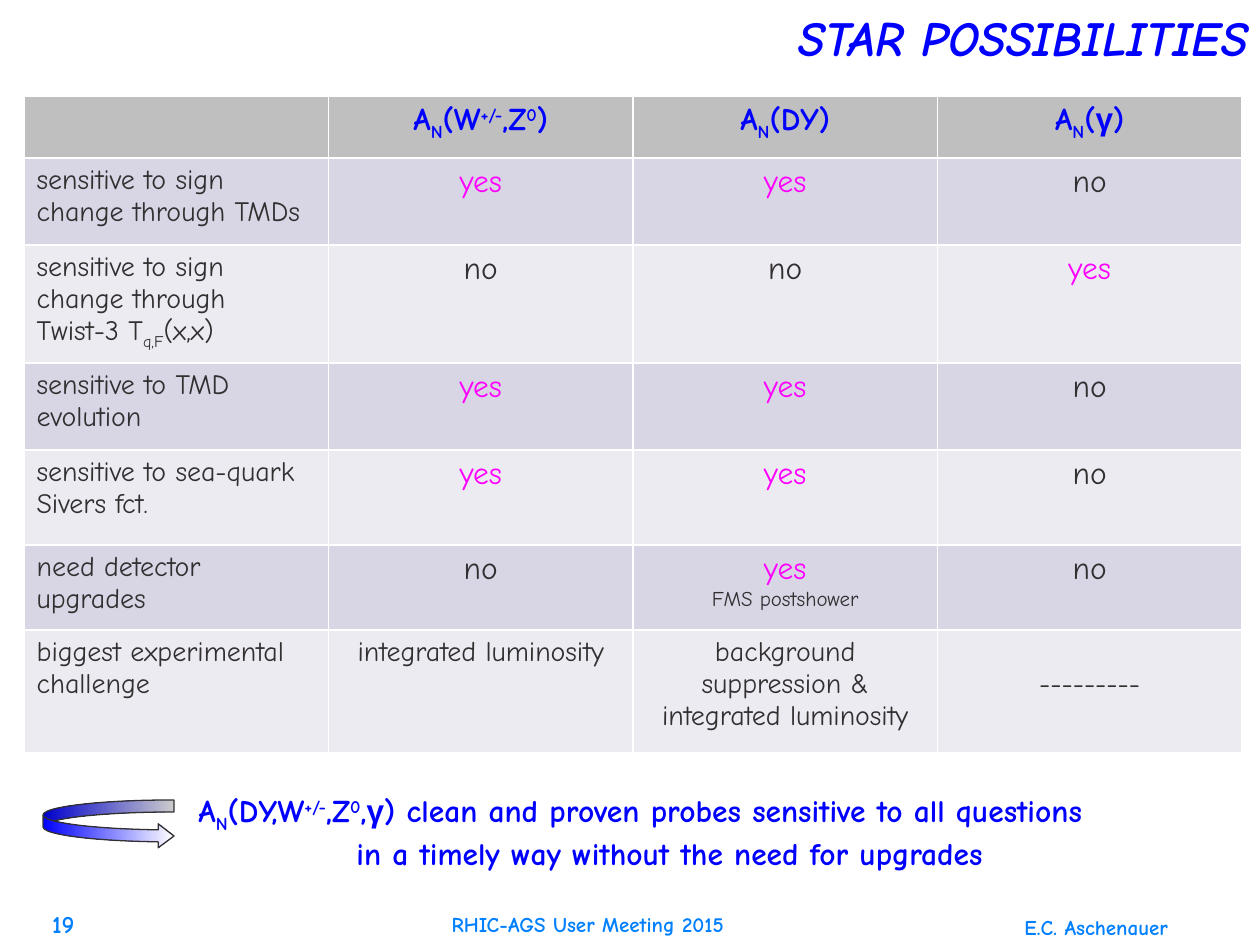
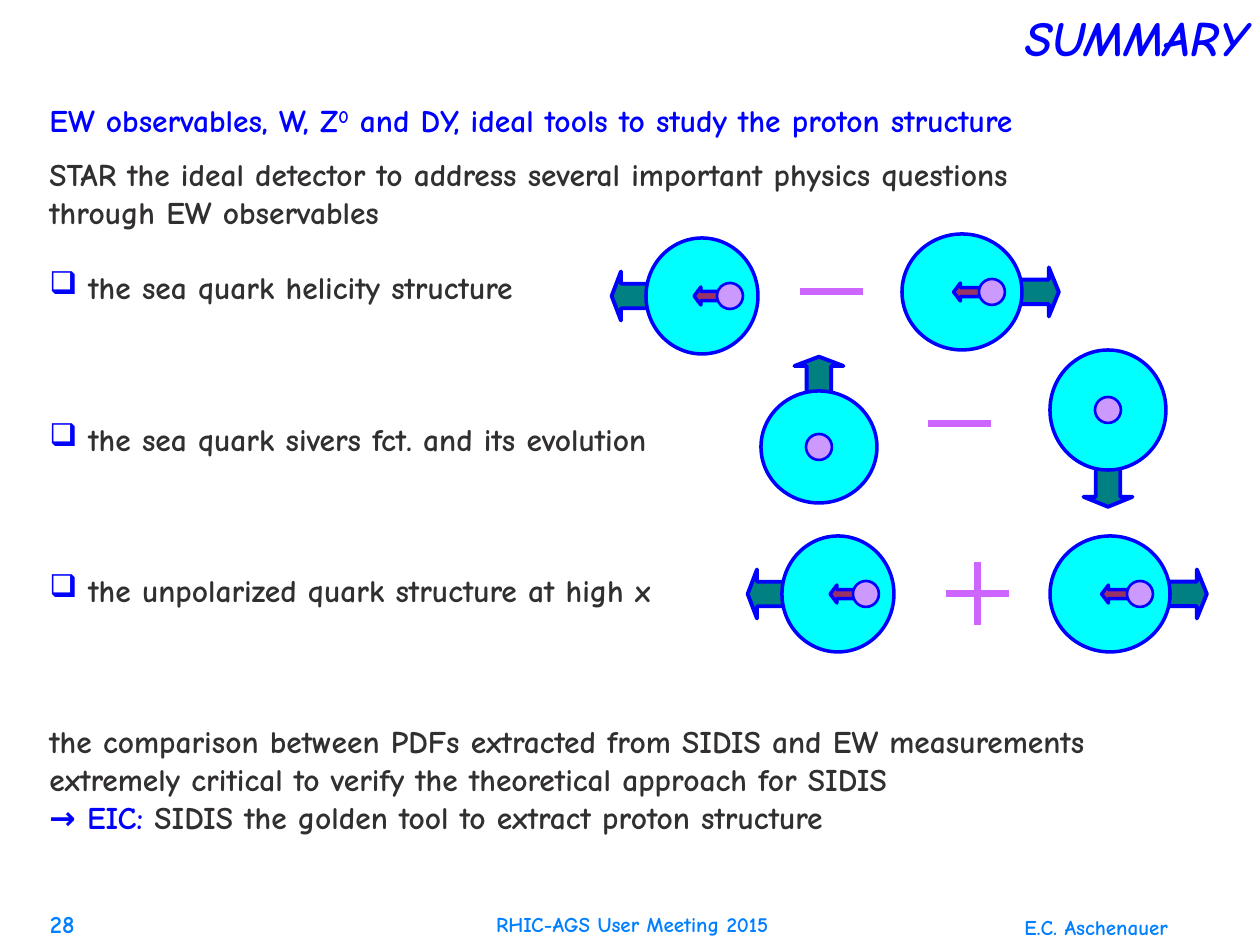
import pptx
import pptx.util
import pptx.dml.color
import pptx.enum.text
import pptx.enum.shapes
import pptx.oxml
import pptx.oxml.ns
import lxml.etree

SHAPE = pptx.enum.shapes.MSO_SHAPE
ALIGN = pptx.enum.text.PP_ALIGN
ANCHOR = pptx.enum.text.MSO_ANCHOR
A = pptx.oxml.ns.qn

FONT = "Comic Neue"
BLUE = "0000FF"
DARK = "322F31"
FOOTER_BLUE = "0080FF"
MAGENTA = "FF00FF"
OPERATOR_PINK = "CC66FF"
HEADER_FILL = "BFBFBF"
BAND_FILLS = ("D8D5E5", "EDEBF2")

SUB_N = ("N", {"baseline": -25})
SUPER_PM = ("+/-", {"baseline": 30})
SUPER_0 = ("0", {"baseline": 30})
GAMMA = ("γ", {"font": "Arial"})

SPINS = {"left": (-1, 0, 270), "right": (1, 0, 90), "up": (0, -1, 0), "down": (0, 1, 180)}


def px(length):
    return pptx.util.Emu(round(length * 914400 / 126))


def rgb(color):
    return pptx.dml.color.RGBColor.from_string(color)


def add_bullet(paragraph, char, color, indent):
    properties = paragraph._p.get_or_add_pPr()
    properties.set("marL", str(px(indent)))
    properties.set("indent", str(-px(indent)))
    bullet_color = lxml.etree.SubElement(properties, A("a:buClr"))
    lxml.etree.SubElement(bullet_color, A("a:srgbClr")).set("val", color)
    lxml.etree.SubElement(properties, A("a:buChar")).set("char", char)


def write_paragraph(paragraph, runs, size=18, color=DARK, bold=False, italic=False,
                    font=FONT, align=ALIGN.LEFT, spacing=None, before=0, indent=0, bullet=None):
    paragraph.alignment = align
    if spacing:
        paragraph.line_spacing = spacing
    if before:
        paragraph.space_before = px(before)
    if bullet:
        add_bullet(paragraph, bullet, BLUE, indent)
    elif indent:
        paragraph._p.get_or_add_pPr().set("marL", str(px(indent)))
    for run_spec in [runs] if isinstance(runs, str) else runs:
        content, changes = (run_spec, {}) if isinstance(run_spec, str) else run_spec
        run = paragraph.add_run()
        run.text = content
        run.font.name = changes.get("font", font)
        run.font.size = pptx.util.Pt(size)
        run.font.bold = bold
        run.font.italic = italic
        run.font.color.rgb = rgb(changes.get("color", color))
        if "baseline" in changes:
            run._r.get_or_add_rPr().set("baseline", str(changes["baseline"] * 1000))


def write(frame, lines, **style):
    for number, line in enumerate(lines):
        runs, changes = line if isinstance(line, tuple) else (line, {})
        paragraph = frame.add_paragraph() if number else frame.paragraphs[0]
        write_paragraph(paragraph, runs, **{**style, **changes})


def add_text(slide, box, lines, anchor=ANCHOR.TOP, **style):
    frame = slide.shapes.add_textbox(*map(px, box)).text_frame
    frame.word_wrap = True
    frame.vertical_anchor = anchor
    write(frame, lines, **style)


def add_centered(slide, preset, center, size, fill, line_width, turn=0, adjustments=()):
    (x, y), (width, height) = center, size
    shape = slide.shapes.add_shape(
        preset, px(x - width / 2), px(y - height / 2), px(width), px(height))
    shape.shadow.inherit = False
    shape.rotation = turn
    for index, value in enumerate(adjustments):
        shape.adjustments[index] = value
    shape.fill.solid()
    shape.fill.fore_color.rgb = rgb(fill)
    shape.line.color.rgb = rgb(BLUE)
    shape.line.width = pptx.util.Pt(line_width)


def add_frame(presentation, title, page, meeting_box):
    slide = presentation.slides.add_slide(presentation.slide_layouts[6])
    add_text(slide, (105, 0, 1155, 84), [title], ANCHOR.MIDDLE, size=28, color=BLUE,
             bold=True, italic=True, align=ALIGN.RIGHT, spacing=0.8)
    footer = {"anchor": ANCHOR.BOTTOM, "color": FOOTER_BLUE, "bold": True}
    add_text(slide, (1012, 893, 231, 53), ["E.C. Aschenauer"], size=12, **footer)
    add_text(slide, (2, 895, 85, 50), [page], size=14, align=ALIGN.RIGHT, **footer)
    add_text(slide, meeting_box, ["RHIC-AGS User Meeting 2015"], size=12,
             align=ALIGN.CENTER, **footer)
    return slide


def fill_cell(cell, lines, fill, **style):
    cell.fill.solid()
    cell.fill.fore_color.rgb = rgb(fill)
    if lines:
        write(cell.text_frame, lines, **style)


def add_probe_table(slide, box):
    headers = [
        ["A", SUB_N, "(W", SUPER_PM, ",Z", SUPER_0, ")"],
        ["A", SUB_N, "(DY)"],
        ["A", SUB_N, "(", GAMMA, ")"],
    ]
    yes = ("yes", {"color": MAGENTA})
    upgrade = [yes, ("FMS postshower", {"size": 12})]
    small = {"size": 16}
    questions = [
        (["sensitive to sign change through TMDs"], [yes], [yes], ["no"]),
        (["sensitive to sign change through",
          ["Twist-3 T", ("q,F", {"baseline": -25}), "(x,x)"]], ["no"], ["no"], [yes]),
        (["sensitive to TMD", "evolution"], [yes], [yes], ["no"]),
        (["sensitive to sea-quark Sivers fct."], [yes], [yes], ["no"]),
        (["need detector upgrades"], ["no"], upgrade, ["no"]),
        (["biggest experimental challenge"], [("integrated luminosity", small)],
         [("background suppression & integrated luminosity", small)], [("---------", small)]),
    ]
    heights = (62, 87, 113, 87, 95, 85, 123)
    table = slide.shapes.add_table(len(heights), 4, *map(px, box)).table
    table.horz_banding = False
    for column in table.columns:
        column.width = px(box[2] / 4)
    for row, height in zip(table.rows, heights):
        row.height = px(height)
    fill_cell(table.cell(0, 0), [], HEADER_FILL)
    for column, header in enumerate(headers, 1):
        fill_cell(table.cell(0, column), [header], HEADER_FILL,
                  color=BLUE, bold=True, align=ALIGN.CENTER)
    for row, (question, *answers) in enumerate(questions, 1):
        band = BAND_FILLS[(row - 1) % 2]
        fill_cell(table.cell(row, 0), question, band, size=16)
        for column, answer in enumerate(answers, 1):
            fill_cell(table.cell(row, column), answer, band, align=ALIGN.CENTER)
    table.cell(6, 3).margin_top = px(38)


def add_conclusion(slide, box):
    left, top, width, height = box
    arrow = slide.shapes.add_shape(
        SHAPE.CURVED_RIGHT_ARROW, px(left), px(top + 15), px(131), px(48))
    arrow.shadow.inherit = False
    for index, value in enumerate((0.25, 0.5, 0.33)):
        arrow.adjustments[index] = value
    arrow.fill.gradient()
    arrow.fill.gradient_angle = 0
    for stop, position, color in zip(arrow.fill.gradient_stops, (0, 1), (BLUE, "FFFFFF")):
        stop.position = position
        stop.color.rgb = rgb(color)
    arrow.line.color.rgb = rgb(DARK)
    arrow.line.width = pptx.util.Pt(0.75)
    probes = ["A", SUB_N, "(DY,W", SUPER_PM, ",Z", SUPER_0, ",", GAMMA,
              ") clean and proven probes sensitive to all questions"]
    timing = ("in a timely way without the need for upgrades", {"indent": 158})
    add_text(slide, (left + 143, top, width - 143, height), [probes, timing],
             color=BLUE, bold=True)


def add_summary_text(slide, box):
    bullet = {"bullet": "❑", "indent": 39}
    lines = [
        (["EW observables, W, Z", SUPER_0,
          " and DY, ideal tools to study the proton structure"], {"color": BLUE}),
        ("STAR the ideal detector to address several important physics questions",
         {"before": 16}),
        "through EW observables",
        ("the sea quark helicity structure", {**bullet, "before": 37}),
        ("the sea quark sivers fct. and its evolution", {**bullet, "before": 114}),
        ("the unpolarized quark structure at high x", {**bullet, "before": 113}),
        ("the comparison between PDFs extracted from SIDIS and EW measurements",
         {"before": 113}),
        "extremely critical to verify the theoretical approach for SIDIS",
        [("→ EIC: ", {"color": BLUE}), "SIDIS the golden tool to extract proton structure"],
    ]
    add_text(slide, box, lines, bold=True, spacing=pptx.util.Pt(21.7))


def add_proton(slide, box, spin):
    left, top, width, height = box
    x, y = left + width / 2, top + height / 2
    step_x, step_y, turn = SPINS[spin]
    along = width if step_x else height
    reach = 0.64 * along
    add_centered(slide, SHAPE.UP_ARROW, (x + step_x * reach, y + step_y * reach),
                 (49, along / 3), "008080", 2.25, turn, (0.5, 0.25))
    add_centered(slide, SHAPE.OVAL, (x, y), (width, height), "00FFFF", 2)
    quark_x = x
    if step_x:
        quark_x = x + along / 4
        add_centered(slide, SHAPE.UP_ARROW, (x + along / 20, y), (18, 0.24 * along),
                     "993366", 2, 270, (0.5, 0.38))
    add_centered(slide, SHAPE.OVAL, (quark_x, y), (26, 26), "CC99FF", 1.5)


def add_operator(slide, box, sign):
    left, top, width, height = box
    x, y = left + width / 2, top + height / 2
    strokes = [(left, y, left + width, y)]
    if sign == "plus":
        strokes.append((x, top, x, top + height))
    for stroke in strokes:
        line = slide.shapes.add_connector(
            pptx.enum.shapes.MSO_CONNECTOR.STRAIGHT, *map(px, stroke))
        line.line.color.rgb = rgb(OPERATOR_PINK)
        line.line.width = pptx.util.Pt(3.5)
        lxml.etree.SubElement(line._element.spPr, A("a:effectLst"))


def build_possibilities(presentation):
    slide = add_frame(presentation, "STAR POSSIBILITIES", "19", (280, 893, 616, 50))
    add_probe_table(slide, (24, 96, 1218, 652))
    add_conclusion(slide, (43, 785, 1211, 90))


def build_summary(presentation):
    slide = add_frame(presentation, "SUMMARY", "28", (310, 893, 645, 50))
    add_summary_text(slide, (37, 95, 1214, 755))
    combinations = [
        ((646, 238, 112, 116), "left", (902, 234, 120, 116), "right", (800, 260, 63, 63), "minus"),
        ((761, 391, 116, 112), "up", (1050, 350, 116, 120), "down", (928, 392, 63, 63), "minus"),
        ((782, 536, 112, 116), "left", (1050, 536, 120, 116), "right", (946, 562, 63, 63), "plus"),
    ]
    for first_box, first_spin, second_box, second_spin, operator_box, sign in combinations:
        add_proton(slide, first_box, first_spin)
        add_proton(slide, second_box, second_spin)
        add_operator(slide, operator_box, sign)


def main():
    presentation = pptx.Presentation()
    presentation.slide_width = px(1260)
    presentation.slide_height = px(945)
    build_possibilities(presentation)
    build_summary(presentation)
    presentation.save("out.pptx")


if __name__ == "__main__":
    main()
